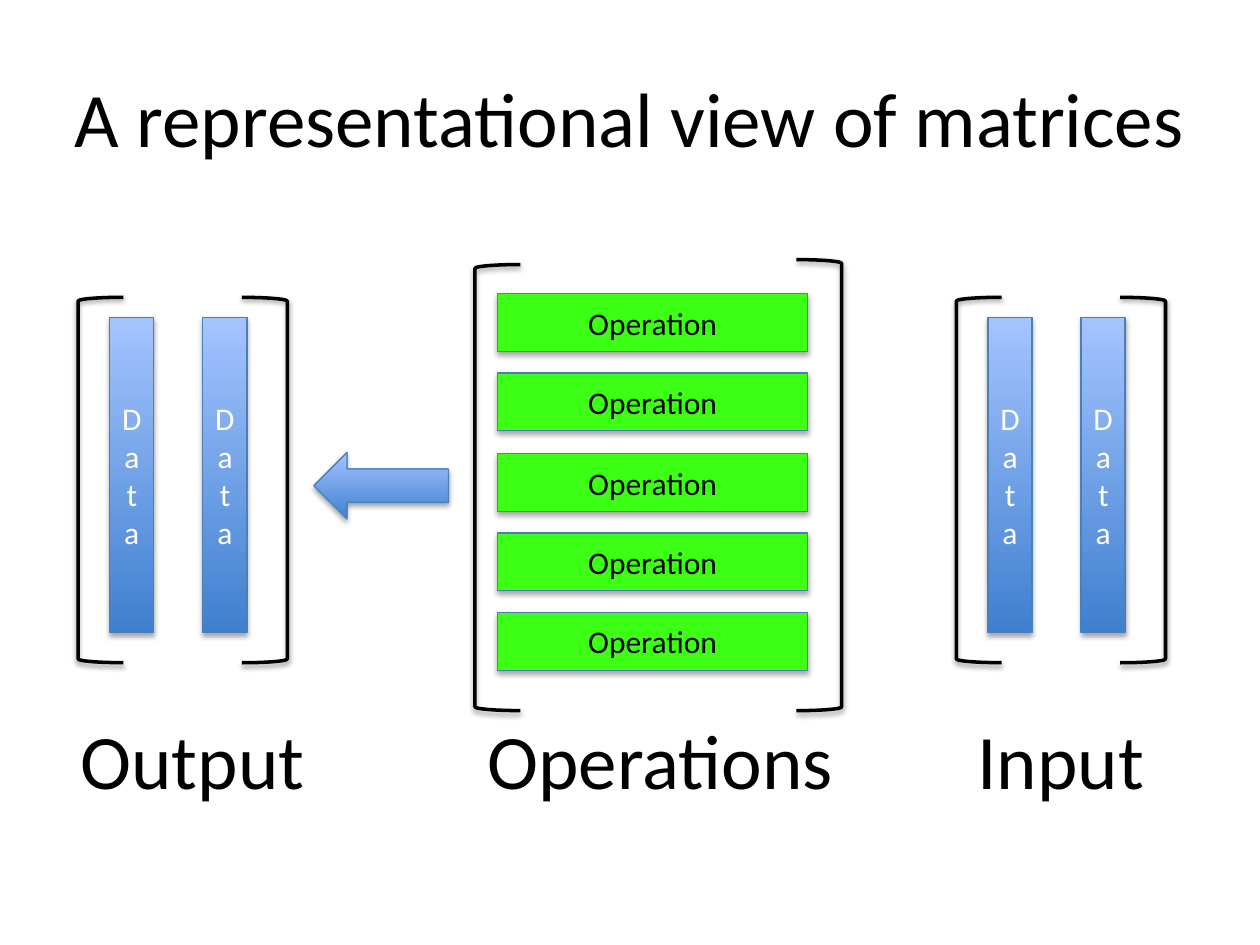
from lxml.etree import fromstring
from pptx import Presentation
from pptx.dml.color import RGBColor
from pptx.enum.shapes import MSO_SHAPE
from pptx.enum.text import MSO_ANCHOR, MSO_AUTO_SIZE, PP_ALIGN
from pptx.util import Emu, Pt

PX = 9144  # EMU in one px, 100 px to the inch
FONT = "Calibri"
COLOURS = {
    "text": "000000",
    "data_text": "FFFFFF",
    "bracket": "000000",
    "outline": "4B7EBC",
    "operation": "3DFF16",
    "gradient_bottom": "3F80CE",
    "gradient_top": "A4C4FF",
    "shadow": "000000",
}
GRADIENT = ("gradient_bottom", "gradient_top")
DRAWING_NS = "http://schemas.openxmlformats.org/drawingml/2006/main"


def px(*lengths):
    return [Emu(length * PX) for length in lengths]


def colour(name):
    return RGBColor.from_string(COLOURS[name])


def write(text_frame, text, size=18, color="text", align=PP_ALIGN.CENTER,
          anchor=MSO_ANCHOR.MIDDLE, wrap=True):
    text_frame.word_wrap = wrap
    text_frame.vertical_anchor = anchor
    paragraph = text_frame.paragraphs[0]
    paragraph.alignment = align
    run = paragraph.add_run()
    run.text = text
    run.font.name = FONT
    run.font.size = Pt(size)
    run.font.color.rgb = colour(color)


def add_shadow(shape, opacity, distance):
    """Cast a soft shadow straight down; opacity in percent, distance in points."""
    shape._element.spPr.append(fromstring(
        f'<a:effectLst xmlns:a="{DRAWING_NS}">'
        f'<a:outerShdw blurRad="{Pt(3.1)}" dist="{Pt(distance)}" dir="5400000" rotWithShape="0">'
        f'<a:srgbClr val="{COLOURS["shadow"]}"><a:alpha val="{opacity * 1000}"/></a:srgbClr>'
        '</a:outerShdw></a:effectLst>'))


class MatrixSlide:
    def __init__(self, presentation):
        self.slide = presentation.slides.add_slide(presentation.slide_layouts[5])

    def title(self, text, *box):
        title = self.slide.shapes.title
        title.left, title.top, title.width, title.height = px(*box)
        write(title.text_frame, text, size=44)

    def group(self):
        return self.slide.shapes.add_group_shape().shapes

    def label(self, text, *box):
        text_box = self.slide.shapes.add_textbox(*px(*box))
        write(text_box.text_frame, text, size=44, align=PP_ALIGN.LEFT,
              anchor=MSO_ANCHOR.TOP, wrap=False)
        text_box.text_frame.auto_size = MSO_AUTO_SIZE.SHAPE_TO_FIT_TEXT

    def block(self, shapes, kind, box, fill, text=None, text_color="text"):
        """Add an outlined shape; fill is one colour name or a gradient pair."""
        shape = shapes.add_shape(kind, *px(*box))
        if fill == GRADIENT:
            shape.fill.gradient()
            shape.fill.gradient_angle = 90
            for stop, name in zip(shape.fill.gradient_stops, fill):
                stop.color.rgb = colour(name)
        else:
            shape.fill.solid()
            shape.fill.fore_color.rgb = colour(fill)
        shape.line.color.rgb = colour("outline")
        shape.line.width = Pt(0.75)
        add_shadow(shape, 35, 1.8)
        if text:
            write(shape.text_frame, text, color=text_color)

    def bracket(self, shapes, left, top, height, rotation=0):
        shape = shapes.add_shape(MSO_SHAPE.LEFT_BRACKET, *px(left, top, 36, height))
        shape.rotation = rotation
        shape.fill.background()
        shape.line.color.rgb = colour("bracket")
        shape.line.width = Pt(2)
        add_shadow(shape, 38, 1.6)

    def data_matrix(self, left):
        shapes = self.group()
        for offset in (25, 99):
            self.block(shapes, MSO_SHAPE.RECTANGLE, (left + offset, 252, 35, 250),
                       GRADIENT, "Data", "data_text")
        self.bracket(shapes, left, 236, 290)
        self.bracket(shapes, left + 130, 236, 290, rotation=180)

    def operation_matrix(self, left, count=5):
        shapes = self.group()
        for row in range(count):
            top = round(233 + 63.25 * row)
            self.block(shapes, MSO_SHAPE.RECTANGLE, (left + 18, top, 246, 46),
                       "operation", "Operation")
        self.bracket(shapes, left, 210, 354)
        self.bracket(shapes, left + 255, 206, 358, rotation=180)


def main():
    presentation = Presentation()
    presentation.slide_width, presentation.slide_height = px(1000, 750)

    slide = MatrixSlide(presentation)
    slide.title("A representational view of matrices", 0, 30, 1000, 125)
    slide.data_matrix(759)
    slide.label("Input", 766, 561, 154, 84)
    slide.operation_matrix(377)
    slide.label("Operations", 377, 561, 299, 84)
    slide.data_matrix(62)
    slide.label("Output", 54, 561, 200, 84)
    slide.block(slide.slide.shapes, MSO_SHAPE.LEFT_ARROW, (249, 359, 107, 53), GRADIENT)

    presentation.save("out.pptx")


if __name__ == "__main__":
    main()
